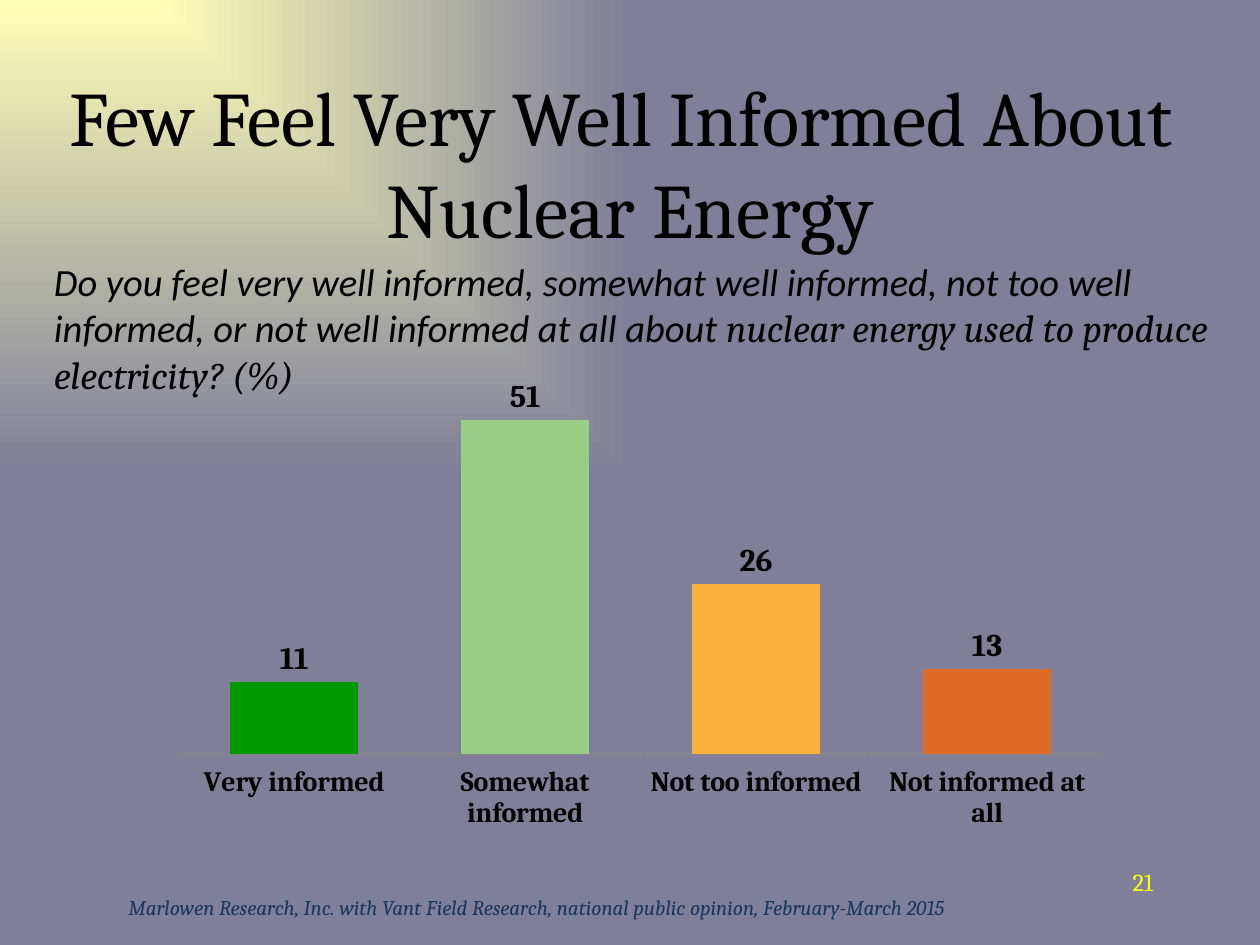
from lxml.etree import SubElement
from pptx import Presentation
from pptx.chart.data import CategoryChartData
from pptx.dml.color import RGBColor
from pptx.enum.chart import (XL_CHART_TYPE, XL_LABEL_POSITION,
                             XL_TICK_LABEL_POSITION, XL_TICK_MARK)
from pptx.enum.text import MSO_ANCHOR, PP_ALIGN
from pptx.oxml import parse_xml
from pptx.oxml.ns import nsdecls, qn
from pptx.util import Inches, Pt

BLACK = RGBColor(0x00, 0x00, 0x00)
NAVY = RGBColor(0x17, 0x37, 0x5E)
YELLOW = RGBColor(0xF8, 0xFF, 0x0F)
CREAM = RGBColor(0xFE, 0xFF, 0xB7)
SLATE = RGBColor(0x7F, 0x7F, 0x99)
GRAY = RGBColor(0x86, 0x86, 0x86)
RUST = RGBColor(0xDE, 0x6C, 0x27)
AMBER = RGBColor(0xFB, 0xAF, 0x3F)
LIME = RGBColor(0x9A, 0xCE, 0x87)
GREEN = RGBColor(0x00, 0x99, 0x00)

SERIF = "Cambria"
SANS = "Calibri"

# Category, percent, bar colour
BARS = [
    ("Not informed at all", 13, RUST),
    ("Not too informed", 26, AMBER),
    ("Somewhat informed", 51, LIME),
    ("Very informed", 11, GREEN),
]


class Deck:
    def __init__(self):
        self.prs = Presentation()
        self.prs.slide_width = Inches(10)
        self.prs.slide_height = Inches(7.5)
        self.slide = self.prs.slides.add_slide(self.prs.slide_layouts[5])

    def backdrop(self, inner, outer):
        fill = self.slide.background.fill
        fill.gradient()
        for stop, color, place in zip(fill.gradient_stops, (inner, outer), (0, 1)):
            stop.color.rgb = color
            stop.position = place
        # Spread from the top left corner instead of along a line
        grad = self.slide.background._cSld.find(".//" + qn("a:gradFill"))
        grad.remove(grad.find(qn("a:lin")))
        shade = SubElement(grad, qn("a:path"), path="rect")
        SubElement(shade, qn("a:fillToRect"), r="100000", b="100000")

    def run(self, para, text, size, color=BLACK, font=SERIF, italic=False):
        run = para.add_run()
        run.text = text
        run.font.name = font
        run.font.size = Pt(size)
        run.font.italic = italic
        run.font.color.rgb = color

    def place(self, shape, box):
        shape.left, shape.top, shape.width, shape.height = map(Inches, box)

    def title(self, box, lines, size):
        shape = self.slide.shapes.title
        self.place(shape, box)
        frame = shape.text_frame
        frame.vertical_anchor = MSO_ANCHOR.MIDDLE
        para = frame.paragraphs[0]
        para.alignment = PP_ALIGN.CENTER
        for i, line in enumerate(lines):
            if i:
                para.add_line_break()
            self.run(para, line, size)

    def text(self, box, align=PP_ALIGN.LEFT, anchor=MSO_ANCHOR.TOP):
        frame = self.slide.shapes.add_textbox(*map(Inches, box)).text_frame
        frame.word_wrap = True
        frame.vertical_anchor = anchor
        para = frame.paragraphs[0]
        para.alignment = align
        return para

    def chart(self, box, bars, layout):
        data = CategoryChartData(number_format="0")
        data.categories = [name for name, _, _ in bars]
        data.add_series("Series 1", [value for _, value, _ in bars])
        chart = self.slide.shapes.add_chart(
            XL_CHART_TYPE.COLUMN_CLUSTERED, *map(Inches, box), data).chart
        chart.has_legend = False
        chart.has_title = False
        chart.font.name = SERIF
        chart.font.size = Pt(18)
        chart.font.color.rgb = BLACK

        # Axes
        axis = chart.category_axis
        axis.reverse_order = True
        axis.major_tick_mark = XL_TICK_MARK.OUTSIDE
        axis.tick_label_position = XL_TICK_LABEL_POSITION.LOW
        axis.tick_labels.font.size = Pt(16)
        axis.tick_labels.font.bold = True
        axis.format.line.color.rgb = GRAY
        scale = chart.value_axis
        scale.minimum_scale = 0
        scale.maximum_scale = 75
        scale.major_unit = 25
        scale.has_major_gridlines = False
        scale.visible = False

        # Bars and their labels
        plot = chart.plots[0]
        plot.gap_width = 81
        plot.vary_by_categories = False
        series = plot.series[0]
        series.format.fill.solid()
        series.format.fill.fore_color.rgb = GREEN
        for i, (_, _, color) in enumerate(bars):
            fill = series.points[i].format.fill
            fill.solid()
            fill.fore_color.rgb = color
        labels = series.data_labels
        labels.show_value = True
        labels.number_format = "0"
        labels.number_format_is_linked = False
        labels.position = XL_LABEL_POSITION.OUTSIDE_END
        labels.font.size = Pt(18)
        labels.font.bold = True

        # Fixed inner plot area
        area = chart.element.find(".//" + qn("c:plotArea"))
        for old in area.findall(qn("c:layout")):
            area.remove(old)
        rules = '<c:layoutTarget val="inner"/>'
        rules += "".join(f'<c:{side}Mode val="edge"/>' for side in "xy")
        rules += "".join(f'<c:{key} val="{part}"/>' for key, part in zip("xywh", layout))
        area.insert(0, parse_xml(
            f'<c:layout {nsdecls("c")}><c:manualLayout>{rules}</c:manualLayout></c:layout>'))


def main():
    deck = Deck()
    deck.backdrop(CREAM, SLATE)

    # Chart
    deck.chart((1.1, 2.09, 7.97, 4.93), BARS, (0.04, 0, 0.92, 0.79))

    # Survey question
    para = deck.text((0.33, 2, 9.42, 0.42))
    deck.run(para, "Do you feel very well informed, somewhat well informed, "
             "not too well informed, or not well informed at all about ",
             22, font=SANS, italic=True)
    deck.run(para, "nuclear energy used to produce electricity? (%)", 22, italic=True)

    # Source line
    para = deck.text((0.92, 7, 7.25, 0.4), anchor=MSO_ANCHOR.MIDDLE)
    deck.run(para, "Marlowen Research, Inc. with Vant Field Research, "
             "national public opinion, February-March 2015", 12, NAVY, italic=True)

    # Title and page number
    deck.title((0, 0.67, 10, 1.23),
               ("Few Feel Very Well Informed About ", "Nuclear Energy"), 44)
    para = deck.text((7.17, 6.83, 2.08, 0.5), PP_ALIGN.RIGHT)
    deck.run(para, "21", 14, YELLOW)

    deck.prs.save("out.pptx")


if __name__ == "__main__":
    main()
